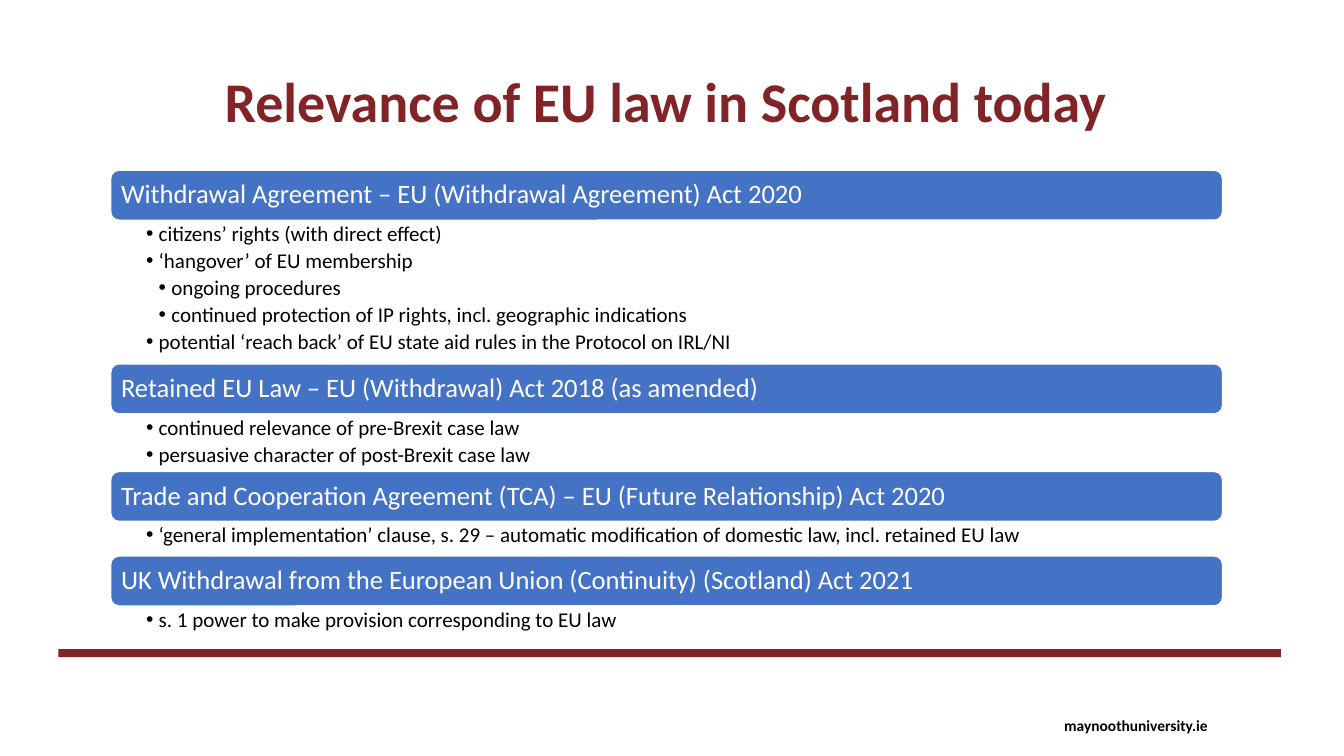
from dataclasses import dataclass

from lxml.etree import SubElement
from pptx import Presentation
from pptx.dml.color import RGBColor
from pptx.enum.shapes import MSO_SHAPE
from pptx.enum.text import MSO_ANCHOR, MSO_AUTO_SIZE, PP_ALIGN
from pptx.oxml.ns import qn
from pptx.util import Cm, Pt

MAROON = RGBColor(0x82, 0x23, 0x27)
BLUE = RGBColor(0x44, 0x72, 0xC4)
WHITE = RGBColor(0xFF, 0xFF, 0xFF)
BLACK = RGBColor(0x00, 0x00, 0x00)
FONT = "Calibri"

LEFT = Cm(2.79)
WIDTH = Cm(28.02)
FIRST_TOP = Cm(4.29)
BAR_HEIGHT = Cm(1.26)
BULLET_STEP = Cm(0.32)


@dataclass(frozen=True)
class Point:
    text: str
    level: int = 1


@dataclass(frozen=True)
class Section:
    heading: str
    list_height: Cm
    points: tuple[Point, ...]


SECTIONS = (
    Section(
        "Withdrawal Agreement – EU (Withdrawal Agreement) Act 2020",
        Cm(3.62),
        (
            Point("citizens’ rights (with direct effect)"),
            Point("‘hangover’ of EU membership"),
            Point("ongoing procedures", 2),
            Point("continued protection of IP rights, incl. geographic indications", 2),
            Point("potential ‘reach back’ of EU state aid rules in the Protocol on IRL/NI"),
        ),
    ),
    Section(
        "Retained EU Law – EU (Withdrawal) Act 2018 (as amended)",
        Cm(1.45),
        (
            Point("continued relevance of pre-Brexit case law"),
            Point("persuasive character of post-Brexit case law"),
        ),
    ),
    Section(
        "Trade and Cooperation Agreement (TCA) – EU (Future Relationship) Act 2020",
        Cm(0.87),
        (
            Point(
                "‘general implementation’ clause, s. 29 – automatic modification "
                "of domestic law, incl. retained EU law"
            ),
        ),
    ),
    Section(
        "UK Withdrawal from the European Union (Continuity) (Scotland) Act 2021",
        Cm(0.87),
        (Point("s. 1 power to make provision corresponding to EU law"),),
    ),
)


def place(shape, left: int, top: int, width: int, height: int) -> None:
    shape.left, shape.top, shape.width, shape.height = left, top, width, height


def set_insets(frame, left: int, top: int, right: int, bottom: int) -> None:
    frame.margin_left, frame.margin_top = left, top
    frame.margin_right, frame.margin_bottom = right, bottom


def style(para, size: float, color: RGBColor, bold: bool = False) -> None:
    para.font.name = FONT
    para.font.size = Pt(size)
    para.font.bold = bold
    para.font.color.rgb = color


def add_bullet(para, level: int) -> None:
    properties = para._p.get_or_add_pPr()
    properties.set("marL", str(BULLET_STEP * level))
    properties.set("indent", str(-BULLET_STEP))
    SubElement(properties, qn("a:buChar")).set("char", "•")


def draw_title(page) -> None:
    title = page.shapes.title
    place(title, Cm(2.77), Cm(1.73), Cm(28), Cm(2.5))
    frame = title.text_frame
    frame.auto_size = MSO_AUTO_SIZE.NONE
    frame.vertical_anchor = MSO_ANCHOR.TOP
    para = frame.paragraphs[0]
    para.text = "Relevance of EU law in Scotland today"
    para.alignment = PP_ALIGN.CENTER
    para.line_spacing = 0.9
    para.space_before = Pt(0)
    style(para, 40, MAROON, True)


def draw_bar(page, heading: str, top: int) -> None:
    bar = page.shapes.add_shape(
        MSO_SHAPE.ROUNDED_RECTANGLE, LEFT, top, WIDTH, BAR_HEIGHT
    )
    bar.shadow.inherit = False
    bar.fill.solid()
    bar.fill.fore_color.rgb = BLUE
    bar.line.color.rgb = WHITE
    bar.line.width = Pt(1)
    frame = bar.text_frame
    frame.word_wrap = True
    frame.vertical_anchor = MSO_ANCHOR.MIDDLE
    set_insets(frame, Cm(0.2), Cm(0.2), Cm(0.2), Cm(0.2))
    para = frame.paragraphs[0]
    para.text = heading
    para.alignment = PP_ALIGN.LEFT
    para.line_spacing = 0.9
    style(para, 19, WHITE)


def draw_list(body, section: Section, top: int) -> None:
    place(body, LEFT, top, WIDTH, section.list_height)
    frame = body.text_frame
    frame.auto_size = MSO_AUTO_SIZE.NONE
    frame.vertical_anchor = MSO_ANCHOR.TOP
    set_insets(frame, Cm(0.89), Cm(0.08), Cm(0.38), Cm(0.08))
    for number, point in enumerate(section.points):
        para = frame.add_paragraph() if number else frame.paragraphs[0]
        para.text = point.text
        para.level = point.level
        para.line_spacing = 0.9
        para.space_before = Pt(0)
        para.space_after = Pt(3)
        add_bullet(para, point.level)
        style(para, 15, BLACK)


def draw_footer(page) -> None:
    rule = page.shapes.add_shape(
        MSO_SHAPE.RECTANGLE, Cm(1.47), Cm(16.36), Cm(30.81), Cm(0.2)
    )
    rule.shadow.inherit = False
    rule.fill.solid()
    rule.fill.fore_color.rgb = MAROON
    rule.line.fill.background()

    box = page.shapes.add_textbox(Cm(26.57), Cm(17.91), Cm(4.22), Cm(0.74))
    box.text_frame.word_wrap = False
    para = box.text_frame.paragraphs[0]
    para.text = "maynoothuniversity.ie"
    style(para, 11, BLACK, True)


def main() -> None:
    deck = Presentation()
    deck.slide_width, deck.slide_height = Cm(33.87), Cm(19.05)
    page = deck.slides.add_slide(deck.slide_layouts.get_by_name("Comparison"))
    draw_footer(page)
    draw_title(page)
    bodies = [
        holder for holder in page.placeholders if holder.placeholder_format.idx > 0
    ]
    top = FIRST_TOP
    for section, body in zip(SECTIONS, bodies):
        draw_bar(page, section.heading, top)
        draw_list(body, section, top + BAR_HEIGHT)
        top += BAR_HEIGHT + section.list_height
    deck.save("out.pptx")


if __name__ == "__main__":
    main()
